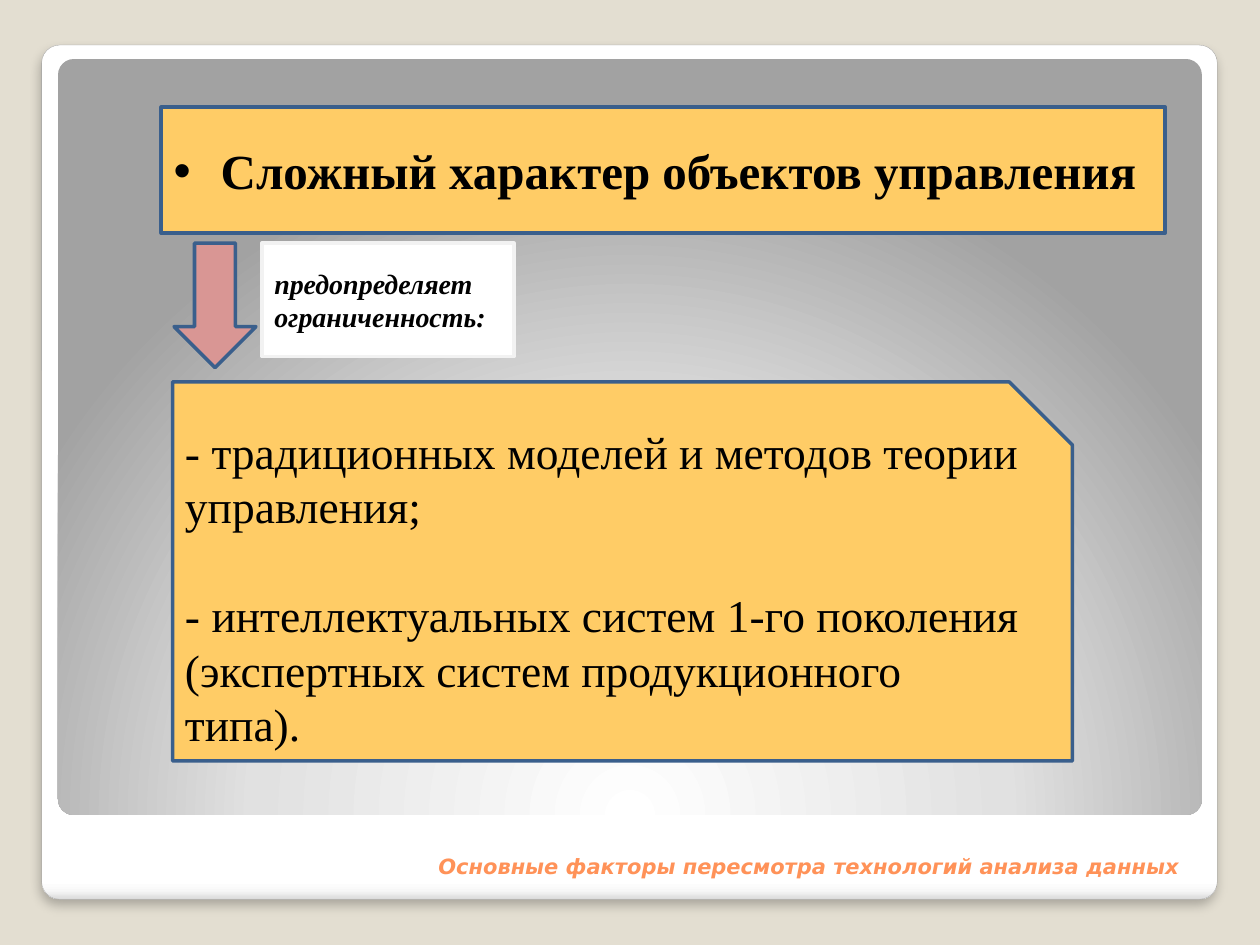
from lxml import etree
from pptx import Presentation
from pptx.dml.color import RGBColor
from pptx.enum.shapes import MSO_SHAPE
from pptx.enum.text import MSO_ANCHOR, PP_ALIGN
from pptx.oxml.ns import qn
from pptx.util import Cm, Pt

RECT, ROUND = MSO_SHAPE.RECTANGLE, MSO_SHAPE.ROUNDED_RECTANGLE
ARROW, SNIP = MSO_SHAPE.DOWN_ARROW, MSO_SHAPE.SNIP_1_RECTANGLE
LEFT, RIGHT = PP_ALIGN.LEFT, PP_ALIGN.RIGHT
MIDDLE, BOTTOM = MSO_ANCHOR.MIDDLE, MSO_ANCHOR.BOTTOM

SAND = RGBColor(0xE3, 0xDE, 0xD1)
GRAY = RGBColor(0xA4, 0xA4, 0xA4)
GOLD = RGBColor(0xFF, 0xCC, 0x66)
BLUE = RGBColor(0x3A, 0x5F, 0x8C)
ROSE = RGBColor(0xD9, 0x96, 0x94)
WHITE = RGBColor(0xFF, 0xFF, 0xFF)
PALE = RGBColor(0xF2, 0xF2, 0xF2)
BLACK = RGBColor(0, 0, 0)
CORAL = RGBColor(0xFF, 0x92, 0x58)
SERIF, SANS = "Times New Roman", "DejaVu Sans"


def add_node(parent, tag, **attrs):
    node = etree.SubElement(parent, qn(tag))
    for key, val in attrs.items():
        node.set(key, str(val))
    return node


def add_box(slide, kind, box, fill=None, line=None, width=2):
    shape = slide.shapes.add_shape(kind, *map(Cm, box))
    shape.shadow.inherit = False
    if fill is not None:
        shape.fill.solid()
        shape.fill.fore_color.rgb = fill
    if line is None:
        shape.line.fill.background()
    else:
        shape.line.color.rgb = line
        shape.line.width = Pt(width)
    return shape


def set_grad(shape, stops):
    """Give the shape colour stops and return the gradient node."""
    shape.fill.gradient()
    grad = shape._element.spPr.find(qn("a:gradFill"))
    for child in list(grad):
        grad.remove(child)
    stop_list = add_node(grad, "a:gsLst")
    for pos, color in stops:
        stop = add_node(stop_list, "a:gs", pos=pos * 1000)
        add_node(stop, "a:srgbClr", val=color)
    return grad


def add_text(shape, lines, size, color=BLACK, font=SERIF, bold=False,
             italic=False, align=LEFT, anchor=MIDDLE, gap=0):
    frame = shape.text_frame
    frame.word_wrap = True
    frame.vertical_anchor = anchor
    for i, line in enumerate(lines):
        para = frame.add_paragraph() if i else frame.paragraphs[0]
        para.alignment = align
        para.space_before = Pt(gap if i else 0)
        run = para.add_run()
        run.text = line
        run.font.size, run.font.name = Pt(size), font
        run.font.bold, run.font.italic = bold, italic
        run.font.color.rgb = color
    return frame


def draw_frame(slide, box):
    x, y, w, h = box
    # White card with a soft shadow
    card = add_box(slide, ROUND, box, line=GRAY, width=0.16)
    card.adjustments[0] = 0.021
    grad = set_grad(card, [(0, "FFFFFF"), (98, "FFFFFF"),
                           (99, "F7F7F7"), (100, "DADADA")])
    add_node(grad, "a:lin", ang=90 * 60000, scaled=0)
    effects = card._element.spPr.find(qn("a:effectLst"))
    shade = add_node(effects, "a:outerShdw", blurRad=Pt(6), dist=Pt(4),
                     dir=90 * 60000, algn="t", rotWithShape=0)
    add_node(add_node(shade, "a:srgbClr", val="000000"), "a:alpha", val=25000)
    # Gray panel, lit from below
    panel = add_box(slide, ROUND, (x + 0.33, y + 0.28, w - 0.64, h - 1.98))
    panel.adjustments[0] = 0.021
    grad = set_grad(panel, [(0, "FFFFFF"), (55, "E1E1E1"), (100, "A2A2A2")])
    glow = add_node(grad, "a:path", path="circle")
    add_node(glow, "a:fillToRect", l=50000, t=175000, r=50000, b=-75000)


def draw_title(slide, box):
    title = slide.shapes.add_textbox(*map(Cm, box))
    add_text(title, ["Основные факторы пересмотра технологий анализа данных"],
             12, CORAL, SANS, True, True, RIGHT, BOTTOM)


def draw_flow(slide, box):
    x, y, w, h = box
    # Cause, as a bullet
    cause = add_box(slide, RECT, (x, y, w, 2.54), GOLD, BLUE)
    frame = add_text(cause, ["Сложный характер объектов управления"],
                     28, bold=True)
    props = frame.paragraphs[0]._p.get_or_add_pPr()
    props.set("marL", str(Cm(0.95)))
    props.set("indent", str(-Cm(0.95)))
    add_node(props, "a:buFont", typeface="Arial")
    add_node(props, "a:buChar", char="•")
    # Arrow and its note
    add_box(slide, ARROW, (x + 0.26, y + 2.74, 1.65, 2.51), ROSE, BLUE)
    note = add_box(slide, RECT, (x + 2.03, y + 2.74, 5.08, 2.29), WHITE, PALE)
    add_text(note, ["предопределяет ограниченность:"], 16,
             bold=True, italic=True)
    # Limits that follow
    limits = add_box(slide, SNIP, (x + 0.23, y + 5.54, w - 2.1, h - 5.54),
                     GOLD, BLUE)
    add_text(limits, [
        "- традиционных моделей и методов теории управления;",
        "- интеллектуальных систем 1-го поколения "
        "(экспертных систем продукционного типа).",
    ], 26, gap=31)


def main():
    deck = Presentation()
    deck.slide_width, deck.slide_height = Cm(25.4), Cm(19.05)
    slide = deck.slides.add_slide(deck.slide_layouts[6])
    slide.background.fill.solid()
    slide.background.fill.fore_color.rgb = SAND
    draw_frame(slide, (0.84, 0.91, 23.7, 17.22))
    draw_title(slide, (1.3, 16.92, 22.73, 0.91))
    draw_flow(slide, (3.25, 2.16, 20.24, 13.18))
    deck.save("out.pptx")


if __name__ == "__main__":
    main()
